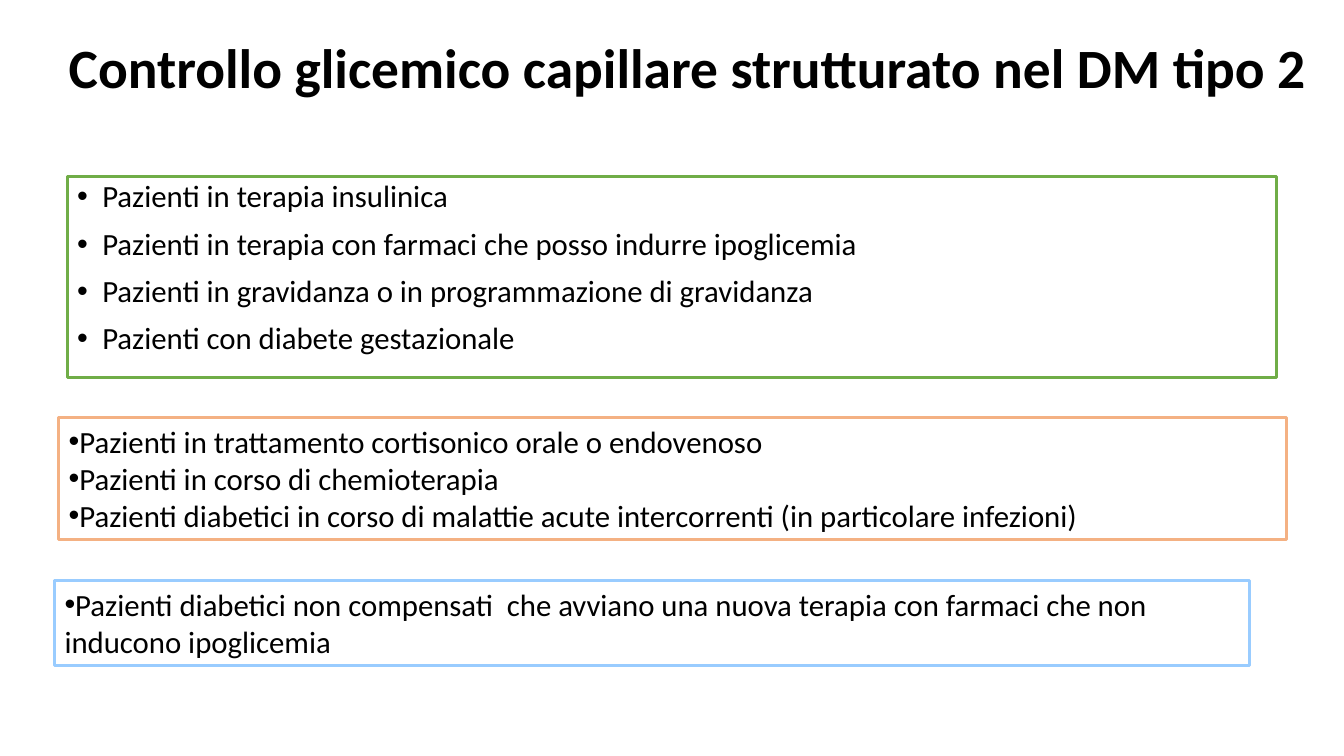
from lxml.etree import SubElement
from pptx import Presentation
from pptx.dml.color import RGBColor
from pptx.enum.shapes import MSO_SHAPE
from pptx.enum.text import MSO_ANCHOR, PP_ALIGN
from pptx.oxml.ns import qn
from pptx.util import Inches, Pt

COLORS = {
    "ink": "000000",
    "paper": "FFFFFF",
    "green": "70AD47",
    "orange": "F4B183",
    "blue": "99CCFF",
}
FONT = "Calibri"
COLS, ROWS = 160, 90


def tint(name):
    return RGBColor.from_string(COLORS[name])


def write(frame, lines, size=22, bold=False, bullet=False, indent=0, lead=1, gap=0):
    frame.word_wrap = True
    frame.vertical_anchor = MSO_ANCHOR.TOP
    for i, line in enumerate(lines):
        para = frame.add_paragraph() if i else frame.paragraphs[0]
        para.alignment = PP_ALIGN.LEFT
        para.line_spacing = lead
        para.space_before = Pt(gap)
        run = para.add_run()
        run.text = line
        font = run.font
        font.name, font.size, font.bold = FONT, Pt(size), bold
        font.color.rgb = tint("ink")
        if bullet:
            props = para._p.get_or_add_pPr()
            props.set("marL", str(Inches(indent)))
            props.set("indent", str(-Inches(indent)))
            SubElement(props, qn("a:buFont")).set("typeface", "Arial")
            SubElement(props, qn("a:buChar")).set("char", "•")


class Deck:
    def __init__(self):
        self.show = Presentation()
        self.show.slide_width = Inches(13.33)
        self.show.slide_height = Inches(7.5)
        self.slide = self.show.slides.add_slide(self.show.slide_layouts[6])
        fill = self.slide.background.fill
        fill.solid()
        fill.fore_color.rgb = tint("paper")

    def place(self, col, row, wide, high):
        x, y = self.show.slide_width / COLS, self.show.slide_height / ROWS
        return [int(n) for n in (col * x, row * y, wide * x, high * y)]

    def title(self, text, *area):
        box = self.slide.shapes.add_textbox(*self.place(*area))
        write(box.text_frame, [text], size=39.6, bold=True, lead=0.9)

    def panel(self, lines, color, *area, **style):
        box = self.slide.shapes.add_shape(MSO_SHAPE.RECTANGLE, *self.place(*area))
        box.shadow.inherit = False
        box.fill.solid()
        box.fill.fore_color.rgb = tint("paper")
        box.line.color.rgb = tint(color)
        box.line.width = Pt(2.25)
        write(box.text_frame, lines, bullet=True, **style)


def main():
    deck = Deck()
    deck.title("Controllo glicemico capillare strutturato nel DM tipo 2", 7, 4.3, 153, 15)
    deck.panel([
        "Pazienti in terapia insulinica",
        "Pazienti in terapia con farmaci che posso indurre ipoglicemia",
        "Pazienti in gravidanza o in programmazione di gravidanza",
        "Pazienti con diabete gestazionale",
    ], "green", 8, 21, 144, 24, indent=0.25, lead=0.9, gap=10)
    deck.panel([
        "Pazienti in trattamento cortisonico orale o endovenoso",
        "Pazienti in corso di chemioterapia",
        "Pazienti diabetici in corso di malattie acute intercorrenti (in particolare infezioni)",
    ], "orange", 7, 49.7, 146.2, 14.5)
    deck.panel([
        "Pazienti diabetici non compensati  che avviano una nuova terapia "
        "con farmaci che non inducono ipoglicemia",
    ], "blue", 6.5, 69.1, 142.3, 10.1)
    deck.show.save("out.pptx")


if __name__ == "__main__":
    main()
